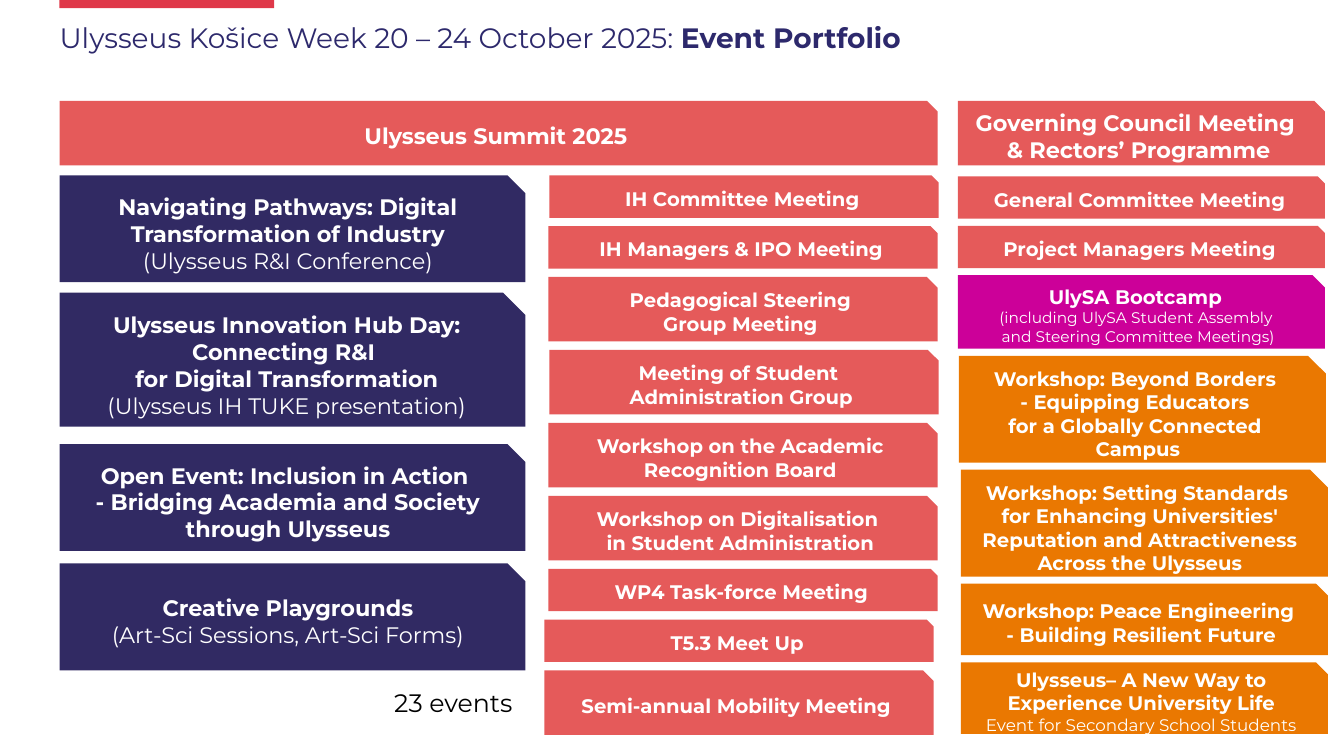
from dataclasses import dataclass

from pptx import Presentation
from pptx.dml.color import RGBColor
from pptx.enum.shapes import MSO_SHAPE
from pptx.enum.text import MSO_ANCHOR, MSO_AUTO_SIZE, PP_ALIGN
from pptx.shapes.autoshape import Shape
from pptx.slide import Slide
from pptx.text.text import TextFrame, _Paragraph
from pptx.util import Inches, Pt

FONT = "Montserrat"
RED = RGBColor(0xDF, 0x38, 0x49)
CORAL = RGBColor(0xE5, 0x5A, 0x5A)
NAVY = RGBColor(0x31, 0x2A, 0x63)
MAGENTA = RGBColor(0xCC, 0x00, 0x99)
ORANGE = RGBColor(0xEA, 0x78, 0x01)
TITLE_BLUE = RGBColor(0x2D, 0x29, 0x6C)
WHITE = RGBColor(0xFF, 0xFF, 0xFF)
BLACK = RGBColor(0x00, 0x00, 0x00)


@dataclass(frozen=True)
class Card:
    """One event; shift_x and shift_y nudge it from its regular place."""
    height: float
    title: str
    detail: str = ""
    color: RGBColor = CORAL
    size: float = 14
    detail_size: float = 16
    shift_x: float = 0
    shift_y: float = 0
    space_after: float = 6


@dataclass(frozen=True)
class Column:
    left: float
    top: float
    bottom: float
    width: float
    cards: tuple[Card, ...]


COLUMNS = (
    Column(0.59, 1, 1.64, 8.71, (Card(0.64, "Ulysseus Summit 2025", size=16),)),
    Column(9.5, 1, 1.64, 3.64, (
        Card(0.64, "Governing Council Meeting \n& Rectors’ Programme", size=16),
    )),
    Column(0.59, 1.74, 6.65, 4.62, (
        Card(1.06, "Navigating Pathways: Digital Transformation of Industry",
             "(Ulysseus R&I Conference)", NAVY, 16),
        Card(1.33, "Ulysseus Innovation Hub Day: Connecting R&I \n"
             "for Digital Transformation",
             "(Ulysseus IH TUKE presentation)", NAVY, 16, shift_y=-0.03),
        Card(1.06, "Open Event: Inclusion in Action \n"
             "- Bridging Academia and Society through Ulysseus",
             color=NAVY, size=16, shift_y=0.01),
        Card(1.06, "Creative Playgrounds",
             "(Art-Sci Sessions, Art-Sci Forms)", NAVY, 16),
    )),
    Column(5.44, 1.74, 7.29, 3.86, (
        Card(0.42, "IH Committee Meeting", shift_x=0.01),
        Card(0.42, "IH Managers & IPO Meeting"),
        Card(0.64, "Pedagogical Steering\nGroup Meeting"),
        Card(0.64, "Meeting of Student \nAdministration Group", shift_x=0.01),
        Card(0.64, "Workshop on the Academic Recognition Board"),
        Card(0.64, "Workshop on Digitalisation \nin Student Administration"),
        Card(0.42, "WP4 Task-force Meeting"),
        Card(0.42, "T5.3 Meet Up", shift_x=-0.04),
        Card(0.64, "Semi-annual Mobility Meeting", shift_x=-0.04),
    )),
    Column(9.5, 1.75, 7.28, 3.64, (
        Card(0.42, "General Committee Meeting"),
        Card(0.42, "Project Managers Meeting"),
        Card(0.73, "UlySA Bootcamp ",
             "(including UlySA Student Assembly \nand Steering Committee Meetings)",
             MAGENTA, detail_size=11, space_after=0),
        Card(1.06, "Workshop: Beyond Borders \n- Equipping Educators \n"
             "for a Globally Connected \nCampus", color=ORANGE, shift_x=0.01),
        Card(1.06, "Workshop: Setting Standards \nfor Enhancing Universities' "
             "Reputation and Attractiveness Across the Ulysseus",
             color=ORANGE, shift_x=0.03),
        Card(0.71, "Workshop: Peace Engineering \n- Building Resilient Future",
             color=ORANGE, shift_x=0.03),
        Card(0.71, "Ulysseus– A New Way to Experience University Life",
             "Event for Secondary School Students", ORANGE,
             detail_size=12, shift_x=0.03),
    )),
)


def add_text(paragraph: _Paragraph, text: str, size: float, color: RGBColor,
             bold: bool = False) -> None:
    for index, line in enumerate(text.split("\n")):
        if index:
            paragraph.add_line_break()
        run = paragraph.add_run()
        run.text = line
        run.font.name = FONT
        run.font.size = Pt(size)
        run.font.bold = bold
        run.font.color.rgb = color


def set_margins(frame: TextFrame, left: float, right: float, vertical: float) -> None:
    frame.word_wrap = True
    frame.margin_left, frame.margin_right = Inches(left), Inches(right)
    frame.margin_top = frame.margin_bottom = Inches(vertical)


def add_filled_shape(slide: Slide, kind: MSO_SHAPE, left: float, top: float,
                     width: float, height: float, color: RGBColor) -> Shape:
    shape = slide.shapes.add_shape(
        kind, Inches(left), Inches(top), Inches(width), Inches(height))
    shape.shadow.inherit = False
    shape.fill.solid()
    shape.fill.fore_color.rgb = color
    shape.line.fill.background()
    return shape


def add_card(slide: Slide, card: Card, left: float, top: float, width: float) -> None:
    shape = add_filled_shape(slide, MSO_SHAPE.SNIP_1_RECTANGLE, left + card.shift_x,
                             top + card.shift_y, width, card.height, card.color)
    frame = shape.text_frame
    set_margins(frame, 0.04, 0.04, 0 if card.color == ORANGE else 0.05)
    frame.vertical_anchor = MSO_ANCHOR.MIDDLE
    paragraph = frame.paragraphs[0]
    paragraph.alignment = PP_ALIGN.CENTER
    paragraph.space_after = Pt(card.space_after)
    add_text(paragraph, card.title, card.size, WHITE, bold=True)
    if card.detail:
        paragraph.add_line_break()
        add_text(paragraph, card.detail, card.detail_size, WHITE)


def add_column(slide: Slide, column: Column) -> None:
    """Stack the cards with equal gaps between the column's top and bottom."""
    free = column.bottom - column.top - sum(card.height for card in column.cards)
    gap = free / max(len(column.cards) - 1, 1)
    top = column.top
    for card in column.cards:
        add_card(slide, card, column.left, top, column.width)
        top += card.height + gap


def add_text_box(slide: Slide, left: float, top: float, width: float,
                 height: float) -> TextFrame:
    return slide.shapes.add_textbox(
        Inches(left), Inches(top), Inches(width), Inches(height)).text_frame


def main() -> None:
    presentation = Presentation()
    presentation.slide_width = Inches(13.33)
    presentation.slide_height = Inches(7.5)
    slide = presentation.slides.add_slide(presentation.slide_layouts[6])

    add_filled_shape(slide, MSO_SHAPE.RECTANGLE, 0.59, -0.01, 2.13, 0.09, RED)

    title = add_text_box(slide, 0.59, 0.19, 9.42, 0.42)
    set_margins(title, 0, 0.1, 0.05)
    heading = title.paragraphs[0]
    heading.line_spacing = 0.9
    add_text(heading, "Ulysseus Košice Week 20 – 24 October 2025: ", 20, TITLE_BLUE)
    add_text(heading, "Event Portfolio", 20, TITLE_BLUE, bold=True)

    for column in COLUMNS:
        add_column(slide, column)

    event_count = add_text_box(slide, 3.87, 6.82, 1.34, 0.3)
    set_margins(event_count, 0.04, 0.04, 0)
    event_count.auto_size = MSO_AUTO_SIZE.SHAPE_TO_FIT_TEXT
    add_text(event_count.paragraphs[0], "23 events", 18, BLACK)

    presentation.save("out.pptx")


if __name__ == "__main__":
    main()
